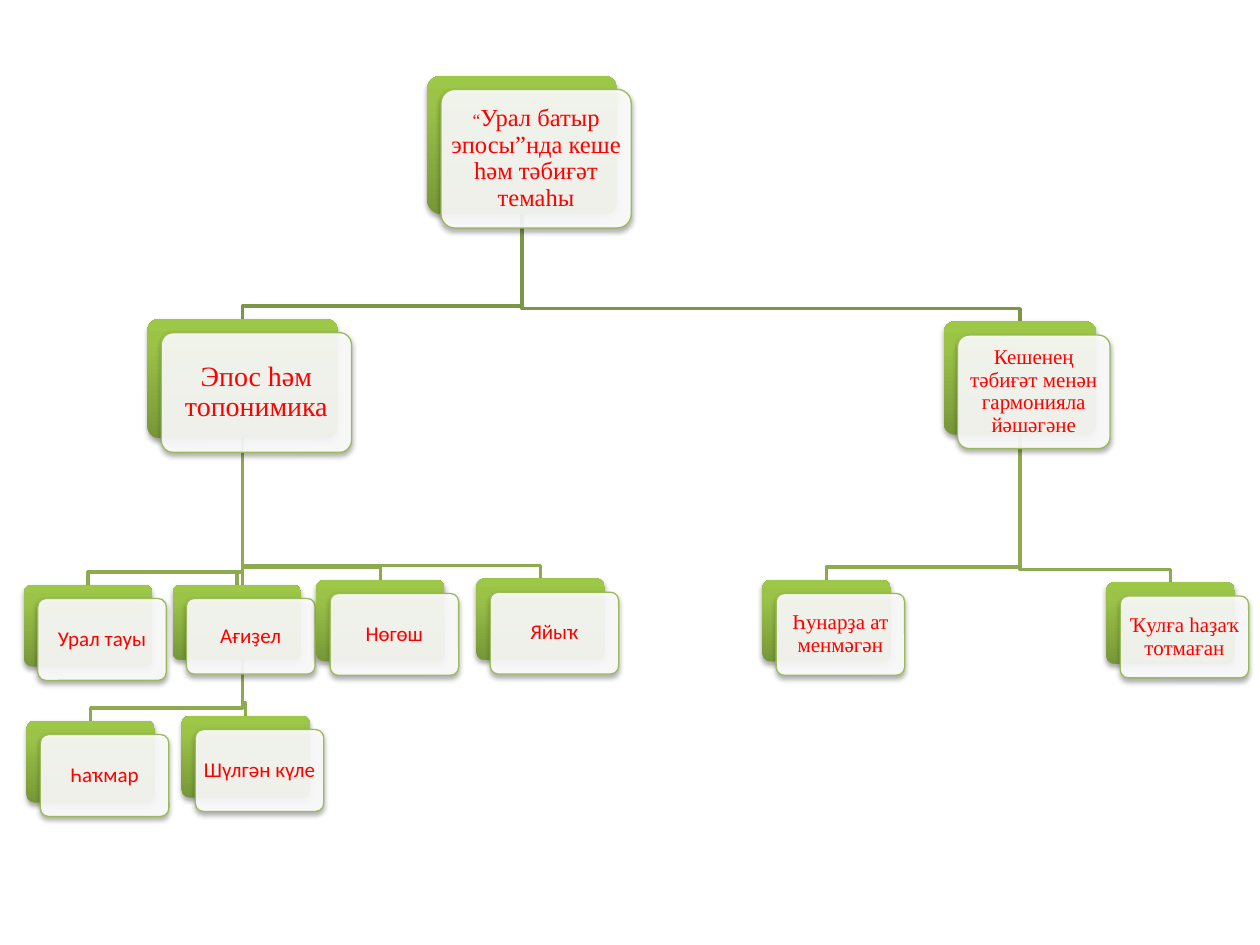
from lxml.etree import SubElement
from pptx import Presentation
from pptx.dml.color import RGBColor
from pptx.enum.shapes import MSO_SHAPE as Shape
from pptx.enum.text import MSO_ANCHOR as Anchor, PP_ALIGN as Align
from pptx.oxml.ns import qn
from pptx.util import Inches, Pt

COLORS = {
    "text": "FF0000", "card": "FFFFFF", "card_line": "9BBB59", "shadow": "000000",
    "dark": "779737", "middle": "9BC348", "light": "9DC746",
    "trunk": "7C9647", "branch": "8DAA51",
}
SERIF, SANS = "Times New Roman", "Calibri"
OFFSET = 0.11
ELBOW = 0.1

# name: left, top, width, height, inset, font, runs
NODES = {
    "theme": (3.39, 0.6, 1.51, 1.1, 0.04, SERIF,
              [("“", 10), ("Урал батыр эпосы”нда кеше һәм тәбиғәт темаһы", 14)]),
    "toponymy": (1.17, 2.53, 1.51, 0.95, 0.07, SERIF, [("Эпос һәм топонимика", 16)]),
    "ural": (0.19, 4.64, 1.02, 0.65, 0.05, SANS, [("Урал тауы", 12)]),
    "agidel": (1.37, 4.64, 1.02, 0.6, 0.05, SANS, [("Ағиҙел", 12)]),
    "nogosh": (2.51, 4.6, 1.02, 0.65, 0.05, SANS, [("Нөгөш", 12)]),
    "yayik": (3.78, 4.59, 1.02, 0.65, 0.05, SANS, [("Яйыҡ", 12)]),
    "hakmar": (0.21, 5.72, 1.02, 0.65, 0.05, SANS, [("Һаҡмар", 12)]),
    "shulgan": (1.44, 5.68, 1.02, 0.65, 0.05, SANS, [("Шүлгән күле", 12)]),
    "harmony": (7.49, 2.55, 1.21, 0.9, 0.05, SERIF,
                [("Кешенең тәбиғәт менән гармонияла йәшәгәне", 12)]),
    "hunting": (6.05, 4.6, 1.02, 0.65, 0.05, SERIF, [("Һунарҙа ат менмәгән", 12)]),
    "arrow": (8.78, 4.62, 1.02, 0.65, 0.05, SERIF, [("Ҡулға һаҙаҡ тотмаған", 12)]),
}
BRANCHES = [
    ("harmony", ["arrow", "hunting"], "branch"),
    ("theme", ["harmony"], "trunk"),
    ("toponymy", ["shulgan", "hakmar", "yayik", "nogosh", "agidel", "ural"], "branch"),
    ("theme", ["toponymy"], "trunk"),
]


def add_color(parent, name):
    return SubElement(parent, qn("a:srgbClr"), val=COLORS[name])


def add_box(left, top, width, height):
    shape = slide.shapes.add_shape(
        Shape.ROUNDED_RECTANGLE, Inches(left), Inches(top), Inches(width), Inches(height))
    shape.adjustments[0] = 0.1
    shape.shadow.inherit = False
    effects = shape._element.spPr.find(qn("a:effectLst"))
    shadow = SubElement(effects, qn("a:outerShdw"), blurRad=str(Pt(3.1)),
                        dist=str(Pt(1.8)), dir="5400000", rotWithShape="0")
    SubElement(add_color(shadow, "shadow"), qn("a:alpha"), val="35000")
    return shape


presentation = Presentation()
presentation.slide_width, presentation.slide_height = Inches(10), Inches(7.5)
slide = presentation.slides.add_slide(presentation.slide_layouts[6])

for parent, children, color in BRANCHES:
    left, top, width, height = NODES[parent][:4]
    start_x, start_y = left + width / 2, top + height
    for child in children:
        left, top, width = NODES[child][:3]
        end_x, elbow_y = left + width / 2, top - ELBOW
        builder = slide.shapes.build_freeform(Inches(start_x), Inches(start_y))
        builder.add_line_segments(
            [(Inches(x), Inches(y))
             for x, y in [(start_x, elbow_y), (end_x, elbow_y), (end_x, top)]],
            close=False)
        line = builder.convert_to_shape()
        line.fill.background()
        line.line.color.rgb = RGBColor.from_string(COLORS[color])
        line.line.width = Pt(2)
        line.shadow.inherit = False

for left, top, width, height, inset, font_name, runs in NODES.values():
    back = add_box(left, top, width, height)
    back.line.fill.background()
    back.fill.gradient()
    back.fill.gradient_angle = 90
    stops = back._element.spPr.find(qn("a:gradFill")).find(qn("a:gsLst"))
    stops.clear()
    for position, color in [(0, "dark"), (80, "middle"), (100, "light")]:
        add_color(SubElement(stops, qn("a:gs"), pos=str(position * 1000)), color)

    card = add_box(left + OFFSET, top + OFFSET, width, height)
    card.fill.solid()
    card.fill.fore_color.rgb = RGBColor.from_string(COLORS["card"])
    card_color = card._element.spPr.find(qn("a:solidFill")).find(qn("a:srgbClr"))
    SubElement(card_color, qn("a:alpha"), val="90000")
    card.line.color.rgb = RGBColor.from_string(COLORS["card_line"])
    card.line.width = Pt(0.75)

    frame = card.text_frame
    frame.word_wrap = True
    frame.vertical_anchor = Anchor.MIDDLE
    for side in ("left", "top", "right", "bottom"):
        setattr(frame, f"margin_{side}", Inches(inset))
    paragraph = frame.paragraphs[0]
    paragraph.alignment = Align.CENTER
    paragraph.line_spacing = 0.9
    for text, size in runs:
        run = paragraph.add_run()
        run.text = text
        for name, value in {"name": font_name, "size": Pt(size)}.items():
            setattr(run.font, name, value)
        run.font.color.rgb = RGBColor.from_string(COLORS["text"])

presentation.save("out.pptx")
